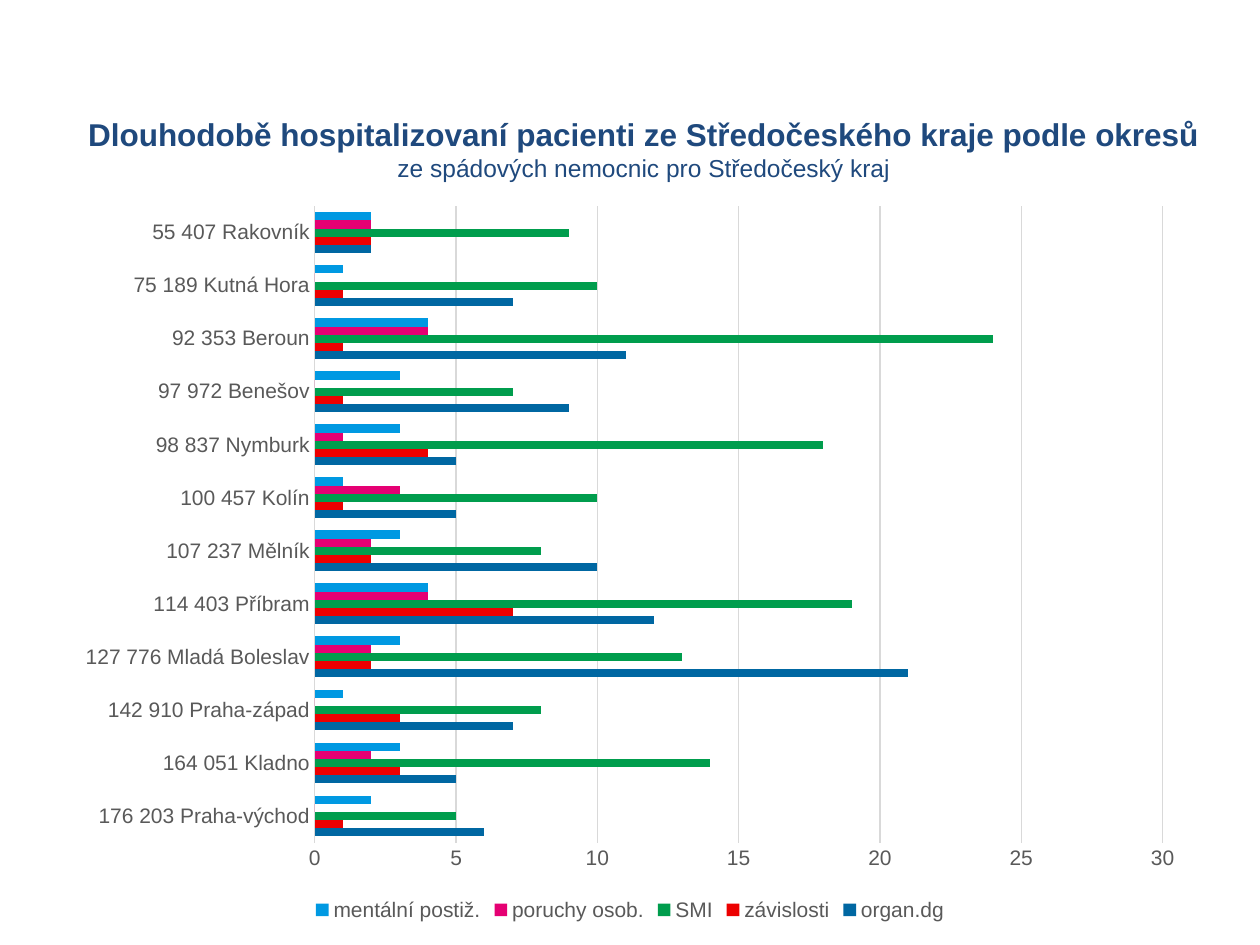
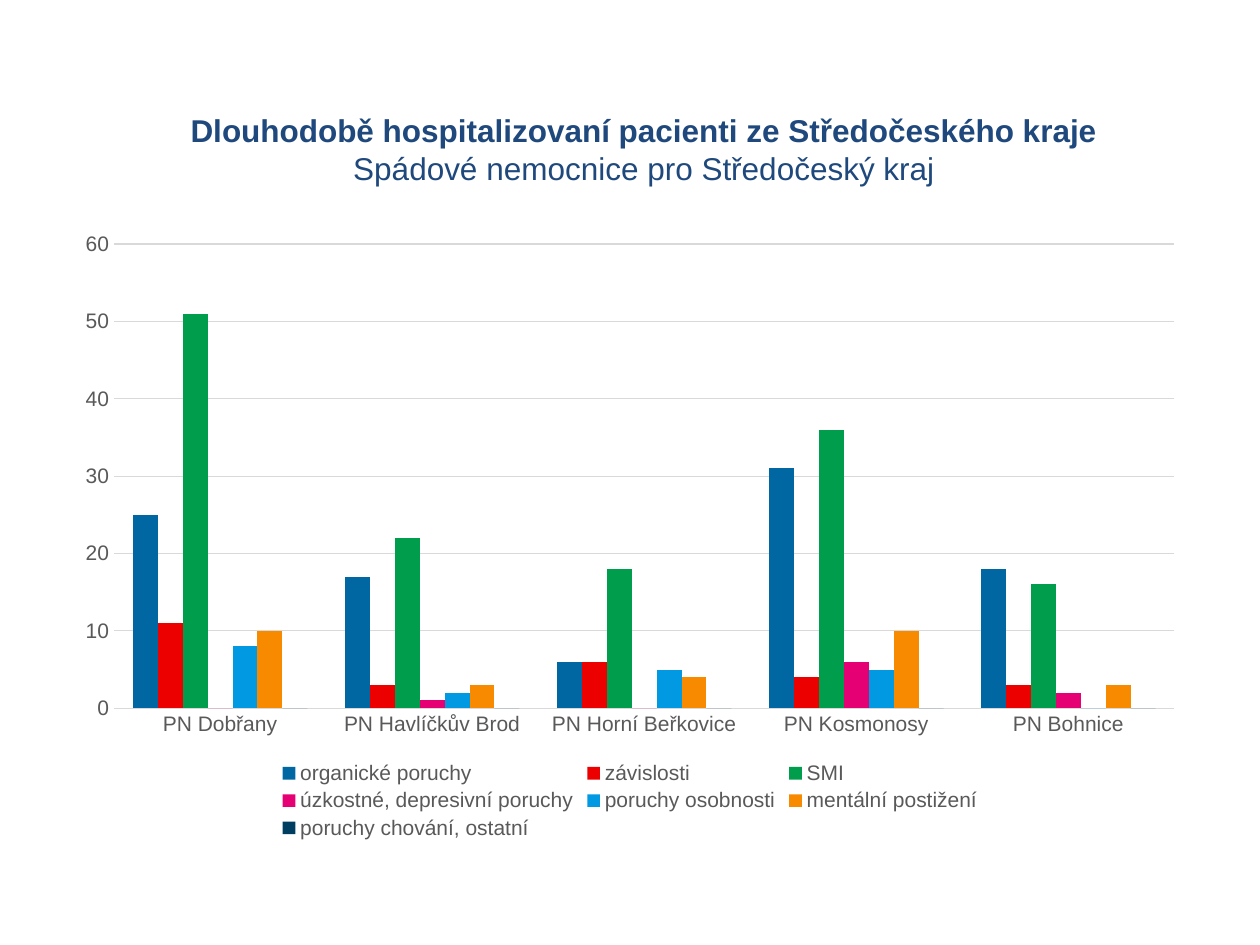
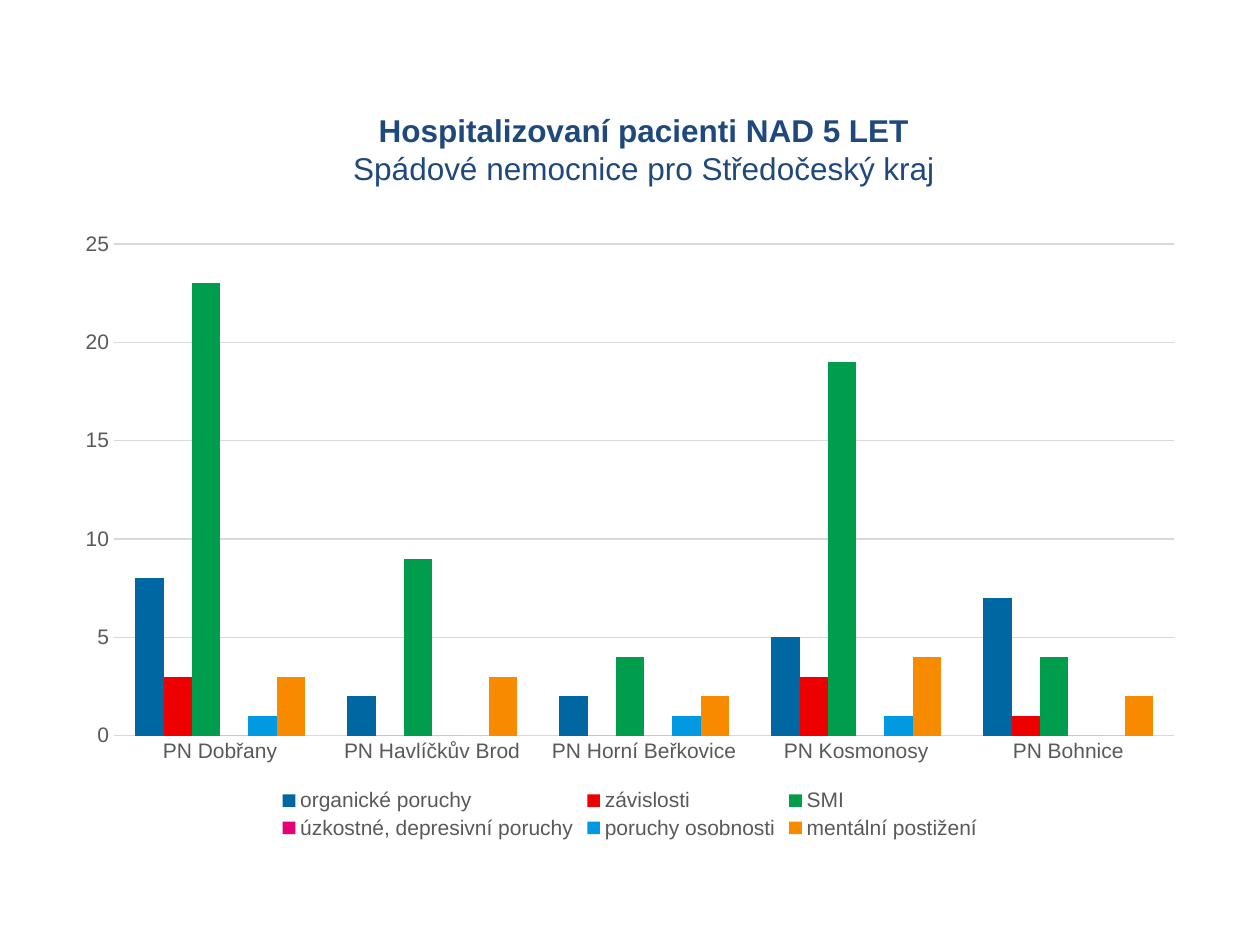
from dataclasses import dataclass

from pptx import Presentation
from pptx.chart.axis import _BaseAxis
from pptx.chart.data import CategoryChartData
from pptx.dml.color import RGBColor
from pptx.enum.chart import XL_CHART_TYPE, XL_LEGEND_POSITION, XL_TICK_MARK
from pptx.enum.text import MSO_ANCHOR, PP_ALIGN
from pptx.presentation import Presentation as Deck
from pptx.slide import Slide
from pptx.text.text import Font
from pptx.util import Inches, Pt

BAR = XL_CHART_TYPE.BAR_CLUSTERED
COLUMN = XL_CHART_TYPE.COLUMN_CLUSTERED
LEGEND_BOTTOM = XL_LEGEND_POSITION.BOTTOM
NO_TICK = XL_TICK_MARK.NONE
MIDDLE = MSO_ANCHOR.MIDDLE
CENTER = PP_ALIGN.CENTER

FONT_NAME = "Arial"
COLORS = {
    "title": "1F497D",
    "label": "595959",
    "grid": "D9D9D9",
    "blue": "0067A2",
    "red": "EC0000",
    "green": "009D4D",
    "pink": "E50073",
    "sky": "0099E2",
    "orange": "F88A00",
    "navy": "003E61",
}


@dataclass(frozen=True)
class Series:
    name: str
    color: str
    values: tuple[int, ...]


@dataclass(frozen=True)
class ChartSlide:
    heading: str
    subtitle: str
    subtitle_size: int
    chart_type: XL_CHART_TYPE
    top: float
    height: float
    axis_maximum: int
    axis_step: int
    categories: tuple[str, ...]
    series: tuple[Series, ...]


DISTRICTS = (
    "176 203 Praha-východ", "164 051 Kladno", "142 910 Praha-západ",
    "127 776 Mladá Boleslav", "114 403 Příbram", "107 237 Mělník",
    "100 457 Kolín", "98 837 Nymburk", "97 972 Benešov",
    "92 353 Beroun", "75 189 Kutná Hora", "55 407 Rakovník",
)
HOSPITALS = (
    "PN Dobřany", "PN Havlíčkův Brod", "PN Horní Beřkovice",
    "PN Kosmonosy", "PN Bohnice",
)
DIAGNOSES = (
    ("organické poruchy", "blue"),
    ("závislosti", "red"),
    ("SMI", "green"),
    ("úzkostné, depresivní poruchy", "pink"),
    ("poruchy osobnosti", "sky"),
    ("mentální postižení", "orange"),
    ("poruchy chování, ostatní", "navy"),
)


def hospital_slide(heading: str, axis_maximum: int, axis_step: int,
                   rows: tuple[tuple[int, ...], ...]) -> ChartSlide:
    """Describe a column chart by hospital, one row of values per diagnosis."""
    series = tuple(Series(name, color, values)
                   for (name, color), values in zip(DIAGNOSES, rows))
    return ChartSlide(heading, "Spádové nemocnice pro Středočeský kraj", 18, COLUMN,
                      1.75, 4.95, axis_maximum, axis_step, HOSPITALS, series)


SLIDES = (
    ChartSlide(
        "Dlouhodobě hospitalizovaní pacienti ze Středočeského kraje podle okresů",
        "ze spádových nemocnic pro Středočeský kraj", 14, BAR,
        1.52, 5.83, 30, 5, DISTRICTS,
        (
            Series("organ.dg", "blue", (6, 5, 7, 21, 12, 10, 5, 5, 9, 11, 7, 2)),
            Series("závislosti", "red", (1, 3, 3, 2, 7, 2, 1, 4, 1, 1, 1, 2)),
            Series("SMI", "green", (5, 14, 8, 13, 19, 8, 10, 18, 7, 24, 10, 9)),
            Series("poruchy osob.", "pink", (0, 2, 0, 2, 4, 2, 3, 1, 0, 4, 0, 2)),
            Series("mentální postiž.", "sky", (2, 3, 1, 3, 4, 3, 1, 3, 3, 4, 1, 2)),
        ),
    ),
    hospital_slide(
        "Dlouhodobě hospitalizovaní pacienti ze Středočeského kraje", 60, 10,
        (
            (25, 17, 6, 31, 18),
            (11, 3, 6, 4, 3),
            (51, 22, 18, 36, 16),
            (0, 1, 0, 6, 2),
            (8, 2, 5, 5, 0),
            (10, 3, 4, 10, 3),
            (0, 0, 0, 0, 0),
        ),
    ),
    hospital_slide(
        "Hospitalizovaní pacienti NAD 5 LET", 25, 5,
        (
            (8, 2, 2, 5, 7),
            (3, 0, 0, 3, 1),
            (23, 9, 4, 19, 4),
            (0, 0, 0, 0, 0),
            (1, 0, 1, 1, 0),
            (3, 3, 2, 4, 2),
        ),
    ),
)


def rgb(name: str) -> RGBColor:
    return RGBColor.from_string(COLORS[name])


def style_font(font: Font, size: int, color: str, bold: bool = False) -> None:
    font.name = FONT_NAME
    font.size = Pt(size)
    font.bold = bold
    font.color.rgb = rgb(color)


def add_title(page: Slide, content: ChartSlide) -> None:
    box = page.shapes.add_textbox(Inches(0.5), Inches(0.73), Inches(9.22), Inches(0.9))
    frame = box.text_frame
    frame.word_wrap = True
    frame.vertical_anchor = MIDDLE
    para = frame.paragraphs[0]
    para.text = f"{content.heading}\v{content.subtitle}"
    para.alignment = CENTER
    heading, subtitle = para.runs
    style_font(heading.font, 18, "title", bold=True)
    style_font(subtitle.font, content.subtitle_size, "title")


def style_axis(axis: _BaseAxis) -> None:
    axis.major_tick_mark = NO_TICK
    axis.minor_tick_mark = NO_TICK
    axis.format.line.fill.background()
    style_font(axis.tick_labels.font, 12, "label")


def add_bar_chart(page: Slide, content: ChartSlide) -> None:
    data = CategoryChartData()
    data.categories = content.categories
    for series in content.series:
        data.add_series(series.name, series.values)
    chart = page.shapes.add_chart(
        content.chart_type, Inches(0.5), Inches(content.top),
        Inches(9), Inches(content.height), data).chart
    chart.has_title = False
    chart.font.name = FONT_NAME
    chart.font.size = Pt(10)

    chart.has_legend = True
    chart.legend.position = LEGEND_BOTTOM
    chart.legend.include_in_layout = False
    style_font(chart.legend.font, 12, "label")

    style_axis(chart.category_axis)
    value_axis = chart.value_axis
    style_axis(value_axis)
    value_axis.minimum_scale = 0
    value_axis.maximum_scale = content.axis_maximum
    value_axis.major_unit = content.axis_step
    grid_line = value_axis.major_gridlines.format.line
    grid_line.color.rgb = rgb("grid")
    grid_line.width = Pt(0.75)

    plot = chart.plots[0]
    plot.gap_width = 150
    plot.overlap = 0
    plot.vary_by_categories = False
    for bars, series in zip(plot.series, content.series):
        bars.format.fill.solid()
        bars.format.fill.fore_color.rgb = rgb(series.color)


def add_chart_slide(deck: Deck, content: ChartSlide) -> None:
    page = deck.slides.add_slide(deck.slide_layouts[6])
    add_title(page, content)
    add_bar_chart(page, content)


def main() -> None:
    deck = Presentation()
    deck.slide_width = Inches(10)
    deck.slide_height = Inches(7.5)
    for content in SLIDES:
        add_chart_slide(deck, content)
    deck.save("out.pptx")


if __name__ == "__main__":
    main()
